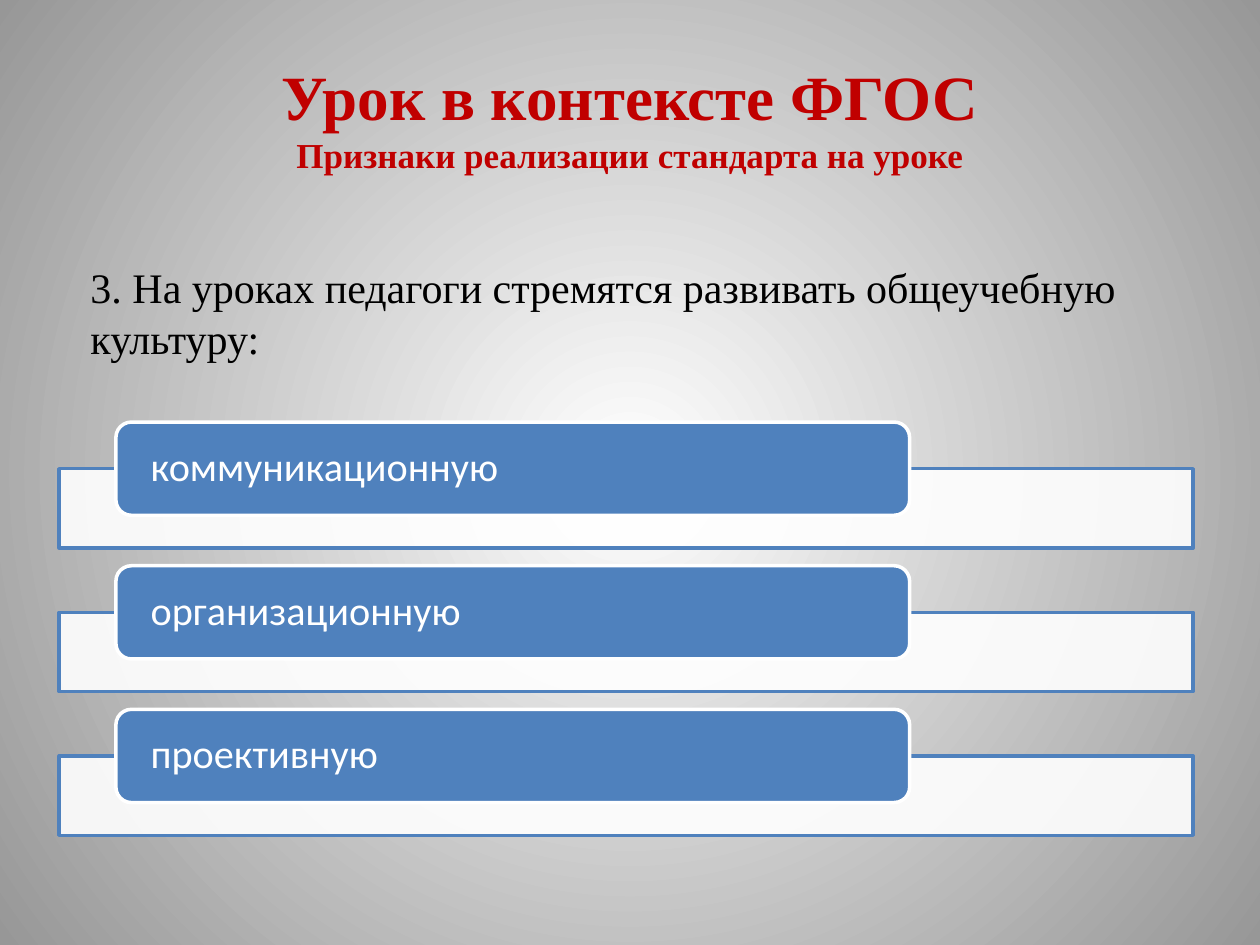
from lxml.etree import SubElement
from pptx import Presentation
from pptx.dml.color import RGBColor
from pptx.enum.shapes import MSO_SHAPE as Shape
from pptx.enum.text import MSO_ANCHOR as Anchor, PP_ALIGN as Align
from pptx.oxml.ns import qn
from pptx.util import Inches, Pt

# Content
HEADING = [("Урок в контексте ФГОС", 36), ("Признаки реализации стандарта на уроке", 20)]
STATEMENT = "3. На уроках педагоги стремятся развивать общеучебную культуру:"
CULTURES = ["коммуникационную", "организационную", "проективную"]

COLORS = {"white": "FFFFFF", "edge": "979797", "red": "C00000",
          "blue": "4F81BD", "black": "000000"}
SERIF, SANS = "Times New Roman", "Calibri"

# Layout of the list, in inches
FIRST_TOP, ROW_STEP = 3.35, 1.14
BAR_DROP = 0.37


def color(name):
    return RGBColor.from_string(COLORS[name])


def set_font(font, face, size, color_name):
    font.name, font.size = face, Pt(size)
    font.color.rgb = color(color_name)


def add_box(slide, kind, box, fill, line):
    shape = slide.shapes.add_shape(kind, *map(Inches, box))
    shape.shadow.inherit = False
    shape.fill.solid()
    shape.fill.fore_color.rgb = color(fill)
    shape.line.color.rgb = color(line)
    shape.line.width = Pt(2)
    return shape


def paint_background(slide):
    fill = slide.background.fill
    fill.gradient()
    for stop, position, name in zip(fill.gradient_stops, (0, 1), ("white", "edge")):
        stop.position = position
        stop.color.rgb = color(name)
    # Radial gradient from the centre
    gradient = slide.element.find(".//" + qn("a:gradFill"))
    linear = gradient.find(qn("a:lin"))
    if linear is not None:
        gradient.remove(linear)
    radial = SubElement(gradient, qn("a:path"), {"path": "circle"})
    SubElement(radial, qn("a:fillToRect"), {side: "50000" for side in "ltrb"})


def add_heading(slide):
    title = slide.shapes.title
    title.left, title.top, title.width, title.height = map(Inches, (0.5, 0.3, 9, 1.25))
    title.text_frame.vertical_anchor = Anchor.MIDDLE
    paragraph = title.text_frame.paragraphs[0]
    paragraph.alignment = Align.CENTER
    for index, (words, size) in enumerate(HEADING):
        if index:
            paragraph.add_line_break()
        run = paragraph.add_run()
        run.text = words
        set_font(run.font, SERIF, size, "red")
        run.font.bold = True


def add_statement(slide):
    statement = slide.shapes.add_textbox(*map(Inches, (0.62, 2.03, 8.44, 0.91)))
    statement.text_frame.word_wrap = True
    paragraph = statement.text_frame.paragraphs[0]
    paragraph.text = STATEMENT
    set_font(paragraph.font, SERIF, 24, "black")


def add_culture(slide, name, top):
    # Translucent bar behind the label
    bar = add_box(slide, Shape.RECTANGLE, (0.47, top + BAR_DROP, 9, 0.63), "white", "blue")
    bar_color = bar.element.spPr.find(qn("a:solidFill"))[0]
    SubElement(bar_color, qn("a:alpha"), {"val": "90000"})

    label = add_box(slide, Shape.ROUNDED_RECTANGLE, (0.92, top, 6.3, 0.74), "blue", "white")
    frame = label.text_frame
    frame.word_wrap = True
    frame.vertical_anchor = Anchor.MIDDLE
    frame.margin_left = frame.margin_right = Inches(0.24)
    frame.margin_top = frame.margin_bottom = 0
    paragraph = frame.paragraphs[0]
    paragraph.text = name
    paragraph.alignment = Align.LEFT
    paragraph.line_spacing = 0.9
    set_font(paragraph.font, SANS, 23, "white")


def main():
    deck = Presentation()
    deck.slide_width, deck.slide_height = Inches(10), Inches(7.5)
    slide = deck.slides.add_slide(deck.slide_layouts[5])
    paint_background(slide)
    add_heading(slide)
    for row, name in enumerate(CULTURES):
        add_culture(slide, name, FIRST_TOP + row * ROW_STEP)
    add_statement(slide)
    deck.save("out.pptx")


if __name__ == "__main__":
    main()
